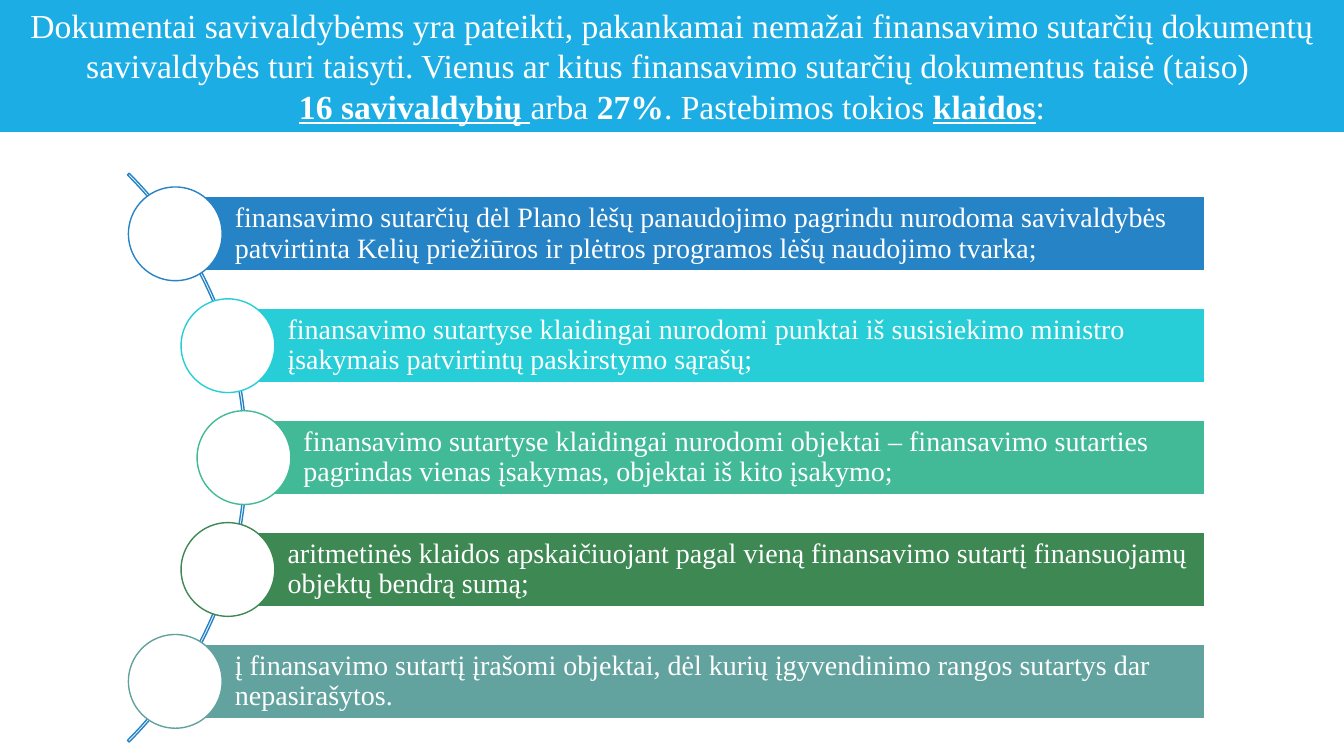
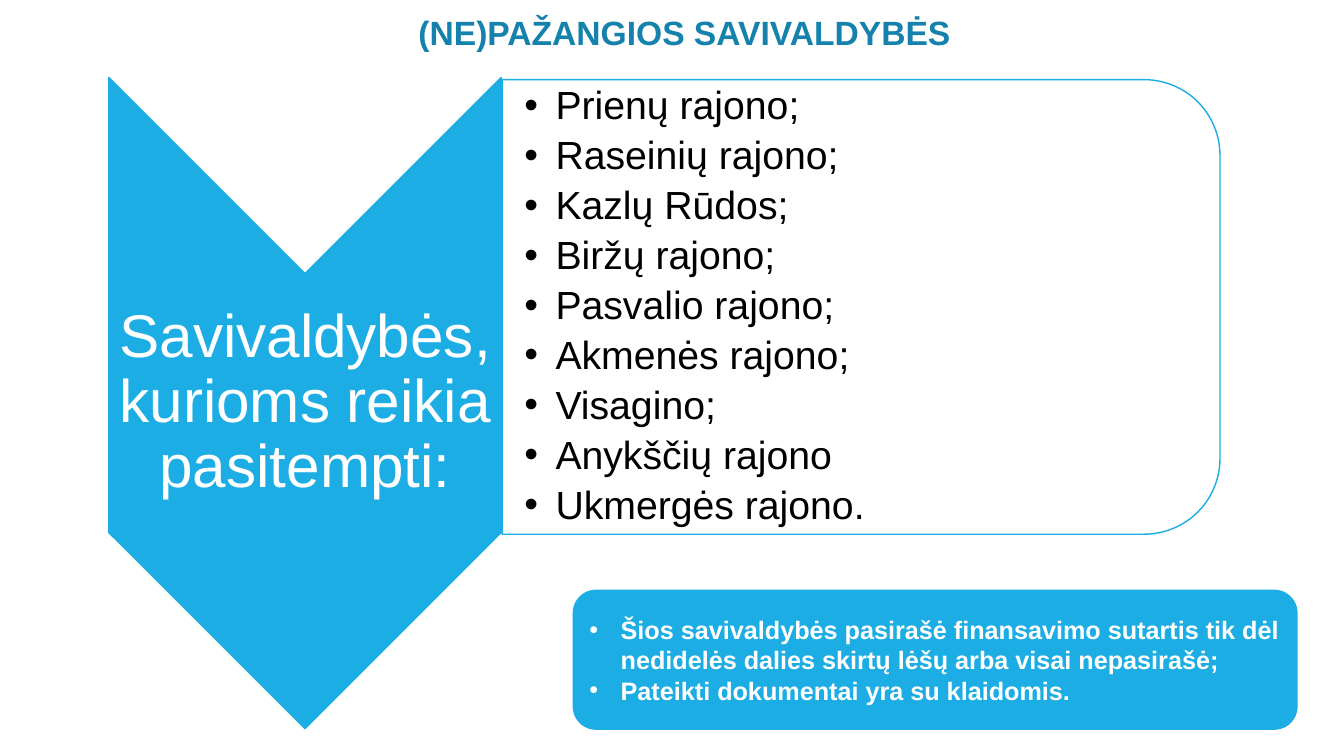
from math import sqrt

from lxml.etree import SubElement
from pptx import Presentation
from pptx.dml.color import RGBColor
from pptx.enum.shapes import MSO_SHAPE as Preset
from pptx.enum.text import MSO_ANCHOR as Anchor, MSO_AUTO_SIZE as AutoSize, PP_ALIGN as Align
from pptx.oxml.ns import qn
from pptx.util import Inches, Pt

WHITE = RGBColor(0xFF, 0xFF, 0xFF)
BLACK = RGBColor(0x00, 0x00, 0x00)
SKY = RGBColor(0x1C, 0xAD, 0xE4)
DEEP_SKY = RGBColor(0x14, 0x82, 0xAC)
BLUE = RGBColor(0x26, 0x83, 0xC6)
TURQUOISE = RGBColor(0x27, 0xCE, 0xD7)
MINT = RGBColor(0x42, 0xBA, 0x97)
GREEN = RGBColor(0x3E, 0x88, 0x53)
SAGE = RGBColor(0x62, 0xA3, 0x9F)

SERIF = "Times New Roman"
SANS = "Arial"
PADDING = (0.1, 0.05, 0.1, 0.05)
BULLET_INDENT = Inches(0.31)

BANNER_SPANS = [
    ("16 savivaldybių ", True, True),
    ("arba ", False, False),
    ("27%", True, False),
    (". Pastebimos tokios ", False, False),
    ("klaidos", True, True),
    (":", False, False),
]
MISTAKES = [
    (BLUE, "finansavimo sutarčių dėl Plano lėšų panaudojimo pagrindu nurodoma savivaldybės "
           "patvirtinta Kelių priežiūros ir plėtros programos lėšų naudojimo tvarka;"),
    (TURQUOISE, "finansavimo sutartyse klaidingai nurodomi punktai iš susisiekimo ministro "
                "įsakymais patvirtintų paskirstymo sąrašų;"),
    (MINT, "finansavimo sutartyse klaidingai nurodomi objektai – finansavimo sutarties "
           "pagrindas vienas įsakymas, objektai iš kito įsakymo;"),
    (GREEN, "aritmetinės klaidos apskaičiuojant pagal vieną finansavimo sutartį finansuojamų "
            "objektų bendrą sumą;"),
    (SAGE, "į finansavimo sutartį įrašomi objektai, dėl kurių įgyvendinimo rangos sutartys dar "
           "nepasirašytos."),
]
MUNICIPALITIES = [
    "Prienų rajono;", "Raseinių rajono;", "Kazlų Rūdos;", "Biržų rajono;", "Pasvalio rajono;",
    "Akmenės rajono;", "Visagino;", "Anykščių rajono", "Ukmergės rajono.",
]
REASONS = [
    "Šios savivaldybės pasirašė finansavimo sutartis tik dėl nedidelės dalies skirtų lėšų "
    "arba visai nepasirašė;",
    "Pateikti dokumentai yra su klaidomis.",
]


def write(para, text, font=SANS, size=20, color=WHITE, bold=False, underline=False,
          align=Align.LEFT, spacing=1.0, after=0, bullet=False):
    span = para.add_run()
    span.text = text
    span.font.name = font
    span.font.size = Pt(size)
    span.font.color.rgb = color
    span.font.bold = bold
    span.font.underline = underline
    para.alignment = align
    para.line_spacing = spacing
    para.space_before = Pt(0)
    para.space_after = Pt(after)
    if bullet:
        props = para._p.get_or_add_pPr()
        props.set("marL", str(BULLET_INDENT))
        props.set("indent", str(-BULLET_INDENT))
        SubElement(props, qn("a:buFont")).set("typeface", SANS)
        SubElement(props, qn("a:buChar")).set("char", "•")


def write_list(frame, items, **style):
    for index, item in enumerate(items):
        para = frame.add_paragraph() if index else frame.paragraphs[0]
        write(para, item, bullet=True, **style)


def place(shape, box):
    shape.left, shape.top, shape.width, shape.height = (Inches(value) for value in box)


def prepare_frame(shape, padding=PADDING, anchor=Anchor.MIDDLE, wrap=True):
    frame = shape.text_frame
    frame.auto_size = AutoSize.NONE
    frame.word_wrap = wrap
    frame.vertical_anchor = anchor
    (frame.margin_left, frame.margin_top,
     frame.margin_right, frame.margin_bottom) = (Inches(value) for value in padding)
    return frame


def add_preset(page, preset, box, fill=None, line=None):
    shape = page.shapes.add_shape(preset, *(Inches(value) for value in box))
    shape.shadow.inherit = False
    if fill is None:
        shape.fill.background()
    else:
        shape.fill.solid()
        shape.fill.fore_color.rgb = fill
    if line is None:
        shape.line.fill.background()
    else:
        shape.line.color.rgb = line
        shape.line.width = Pt(1)
    return shape


def add_turned(page, preset, box, fill, line):
    left, top, width, height = box
    shift = (width - height) / 2
    shape = add_preset(page, preset, (left + shift, top - shift, height, width), fill, line)
    shape.rotation = 90
    return shape


def add_title(page, box, anchor=Anchor.TOP, wrap=True):
    title = page.shapes.title
    place(title, box)
    return title, prepare_frame(title, anchor=anchor, wrap=wrap)


def add_banner(page, box):
    title, frame = add_title(page, box)
    title.fill.solid()
    title.fill.fore_color.rgb = SKY
    para = frame.paragraphs[0]
    style = dict(font=SERIF, size=24, align=Align.CENTER)
    write(para, "Dokumentai savivaldybėms yra pateikti, pakankamai nemažai finansavimo sutarčių "
                "dokumentų savivaldybės turi taisyti. Vienus ar kitus finansavimo sutarčių "
                "dokumentus taisė (taiso) ", **style)
    para.add_line_break()
    for text, bold, underline in BANNER_SPANS:
        write(para, text, bold=bold, underline=underline, **style)


def add_curved_list(page, box):
    left, top, width, height = box
    step, bar_height, dot = 1.11, 0.74, 0.93
    center_x, center_y = left - 2.81, top + height / 2
    radius, outline = 3.96, 3.99
    arc = add_preset(page, Preset.BLOCK_ARC,
                     (center_x - outline, center_y - outline, 2 * outline, 2 * outline), line=BLUE)
    for index, value in enumerate((189, 27, 0.003)):
        arc.adjustments[index] = value

    for index, (color, text) in enumerate(MISTAKES):
        offset = (index - (len(MISTAKES) - 1) / 2) * step
        x = center_x + sqrt(radius ** 2 - offset ** 2)
        y = center_y + offset
        bar = add_preset(page, Preset.RECTANGLE,
                         (x, y - bar_height / 2, left + width - x, bar_height), color, WHITE)
        frame = prepare_frame(bar, (0.59, 0.06, 0.06, 0.06))
        write(frame.paragraphs[0], text, font=SERIF, spacing=0.9)
        add_preset(page, Preset.OVAL, (x - dot / 2, y - dot / 2, dot, dot), WHITE, color)


def add_arrow_panel(page, box):
    left, top, width, height = box
    add_turned(page, Preset.CHEVRON, box, SKY, SKY)
    label = page.shapes.add_textbox(Inches(left), Inches(top + width / 2),
                                    Inches(width), Inches(height - width))
    frame = prepare_frame(label, (0.03, 0.03, 0.03, 0.03))
    write(frame.paragraphs[0], "Savivaldybės, kurioms reikia pasitempti:",
          size=43, align=Align.CENTER, spacing=0.9)


def add_municipality_panel(page, box):
    left, top, width, height = box
    outline = add_turned(page, Preset.ROUND_2_SAME_RECTANGLE, box, WHITE, SKY)
    body = page.placeholders[1]
    place(body, (left, top + 0.22, width - 0.22, height - 0.44))
    outline.element.addnext(body.element)
    frame = prepare_frame(body, (0.22, 0.02, 0.02, 0.02))
    write_list(frame, MUNICIPALITIES, size=28, color=BLACK, spacing=0.9, after=5.4)


def add_reason_box(page, box):
    card = add_preset(page, Preset.ROUNDED_RECTANGLE, box, SKY)
    write_list(prepare_frame(card), REASONS, size=18, bold=True)


def build_mistakes_page(deck):
    page = deck.slides.add_slide(deck.slide_layouts[5])
    add_banner(page, (0, 0, 13.33, 1.31))
    add_curved_list(page, (1.27, 1.72, 10.68, 5.64))


def build_municipalities_page(deck):
    page = deck.slides.add_slide(deck.slide_layouts[1])
    frame = add_title(page, (4.05, 0.07, 5.62, 0.5), wrap=False)[1]
    write(frame.paragraphs[0], "(NE)PAŽANGIOS SAVIVALDYBĖS", size=24, color=DEEP_SKY, bold=True)
    add_arrow_panel(page, (1.08, 0.77, 3.89, 6.46))
    add_municipality_panel(page, (4.98, 0.79, 7.12, 4.51))
    add_reason_box(page, (5.68, 5.85, 7.19, 1.39))


def main():
    deck = Presentation()
    deck.slide_width = Inches(13.33)
    deck.slide_height = Inches(7.5)
    build_mistakes_page(deck)
    build_municipalities_page(deck)
    deck.save("out.pptx")


if __name__ == "__main__":
    main()
